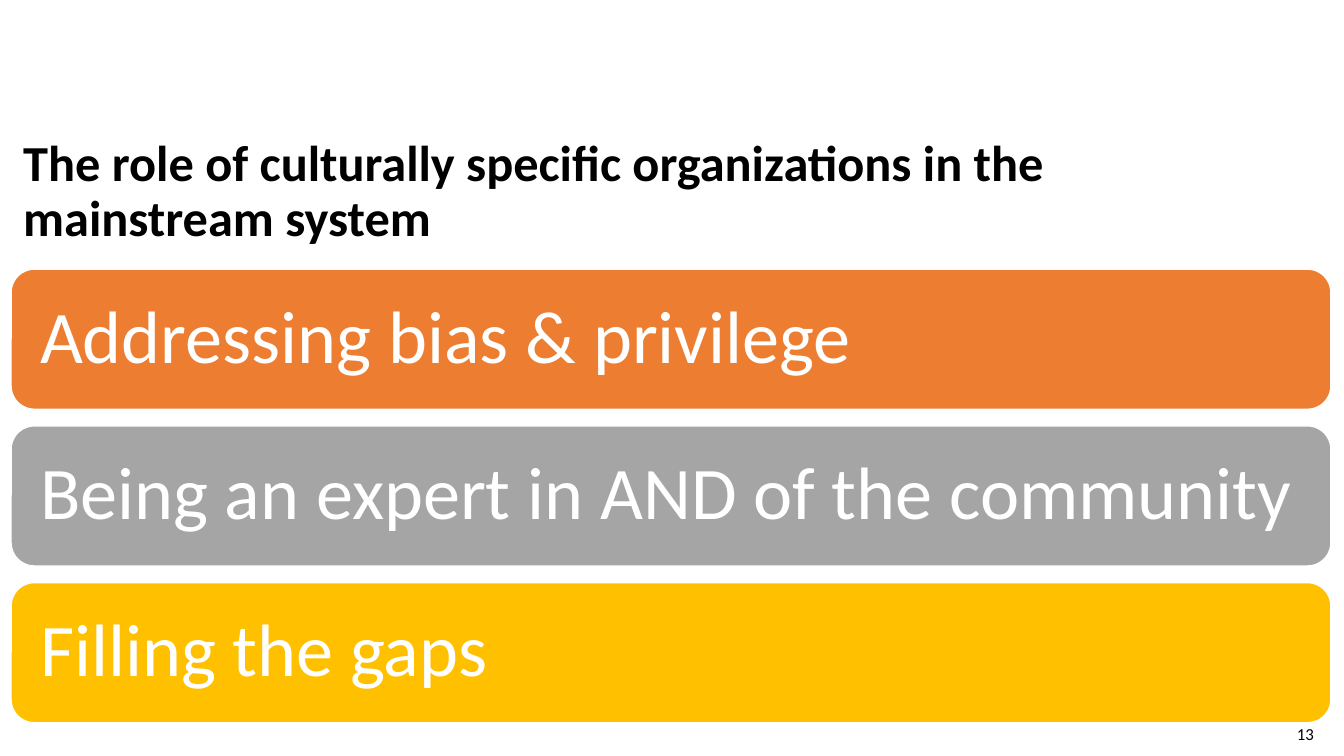
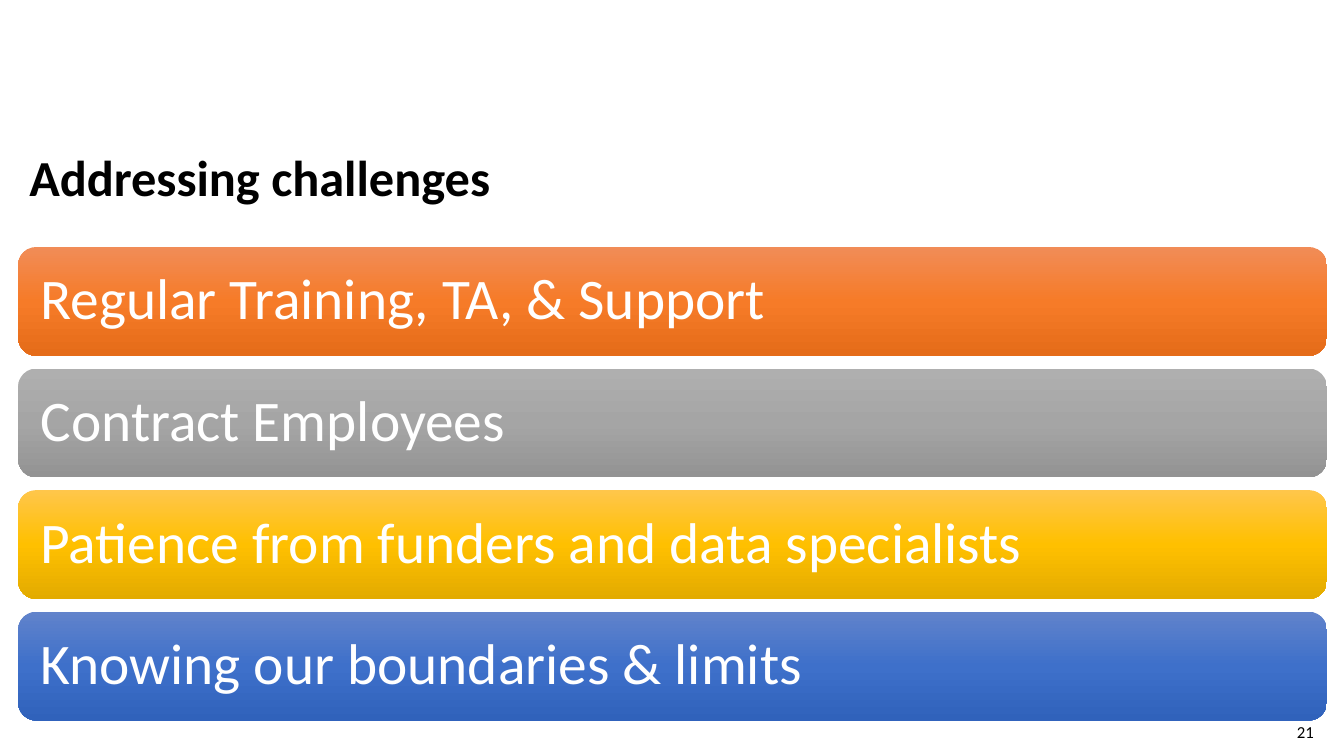
from copy import deepcopy

from pptx import Presentation
from pptx.dml.color import RGBColor
from pptx.enum.shapes import MSO_SHAPE
from pptx.enum.text import MSO_ANCHOR, MSO_AUTO_SIZE, PP_ALIGN
from pptx.oxml.ns import qn
from pptx.util import Inches, Pt

ROUND = MSO_SHAPE.ROUNDED_RECTANGLE
MIDDLE = MSO_ANCHOR.MIDDLE
FIXED = MSO_AUTO_SIZE.NONE
LEFT, RIGHT = PP_ALIGN.LEFT, PP_ALIGN.RIGHT

# Shared style
FONT = "Calibri"
BLACK, WHITE = "000000", "FFFFFF"


def paint(color, code):
    color.rgb = RGBColor.from_string(code)


def write(shape, text, size, code, align=LEFT, bold=False, space=1.0):
    frame = shape.text_frame
    frame.word_wrap = True
    frame.auto_size = FIXED
    frame.vertical_anchor = MIDDLE
    para = frame.paragraphs[0]
    para.alignment = align
    para.line_spacing = space
    run = para.add_run()
    run.text = text
    run.font.name = FONT
    run.font.size = Pt(size)
    run.font.bold = bold
    paint(run.font.color, code)


# Each bar: text and one flat colour, or three colours from top to bottom
PAGES = [
    {
        "title": "The role of culturally specific organizations in the mainstream system",
        "place": (0.13, 1.41, 11.93, 1),
        "bars": [
            ("Addressing bias & privilege", ["ED7D31"]),
            ("Being an expert in AND of the community", ["A5A5A5"]),
            ("Filling the gaps", ["FFC000"]),
        ],
        "left": 0.11, "top": 2.67, "width": 13.09, "height": 1.39,
        "step": 1.555, "inset": 0.22, "size": 53,
        "number": "13", "foot": 7.08,
    },
    {
        "title": "Addressing challenges",
        "place": (0.19, 1.2, 6.67, 1.17),
        "bars": [
            ("Regular Training, TA, & Support", ["F18C57", "F67B28", "E56C19"]),
            ("Contract Employees", ["AFAFAF", "A5A5A5", "939393"]),
            ("Patience from funders and data specialists", ["FFC64B", "FFC000", "E3AB00"]),
            ("Knowing our boundaries & limits", ["6183CB", "3E70CA", "3062BB"]),
        ],
        "left": 0.18, "top": 2.45, "width": 12.98, "height": 1.08,
        "step": 1.206, "inset": 0.17, "size": 41,
        "number": "21", "foot": 7.06,
    },
]

deck = Presentation()
deck.slide_width, deck.slide_height = Inches(13.33), Inches(7.5)

for page in PAGES:
    slide = deck.slides.add_slide(deck.slide_layouts[5])

    # Title
    title = slide.shapes.title
    title.left, title.top, title.width, title.height = map(Inches, page["place"])
    write(title, page["title"], 36, BLACK, bold=True, space=0.9)

    # Bars
    for row, (text, codes) in enumerate(page["bars"]):
        bar = slide.shapes.add_shape(
            ROUND, Inches(page["left"]), Inches(page["top"] + row * page["step"]),
            Inches(page["width"]), Inches(page["height"]))
        bar.shadow.inherit = False
        if len(codes) == 1:
            bar.fill.solid()
            paint(bar.fill.fore_color, codes[0])
            paint(bar.line.color, WHITE)
            bar.line.width = Pt(1)
        else:
            bar.fill.gradient()
            bar.fill.gradient_angle = 270
            # The default gradient has two stops; add the middle one
            first = bar._element.spPr.find(".//" + qn("a:gs"))
            first.addnext(deepcopy(first))
            for spot, (stop, code) in enumerate(zip(bar.fill.gradient_stops, codes)):
                stop.position = spot / 2
                paint(stop.color, code)
            bar.line.fill.background()
        frame = bar.text_frame
        frame.margin_left = frame.margin_right = Inches(page["inset"])
        frame.margin_top = frame.margin_bottom = Inches(page["inset"])
        write(bar, text, page["size"], WHITE, space=0.9)

    # Page number
    foot = slide.shapes.add_textbox(
        Inches(10.13), Inches(page["foot"]), Inches(3), Inches(0.4))
    write(foot, page["number"], 12, BLACK, align=RIGHT)

deck.save("out.pptx")
